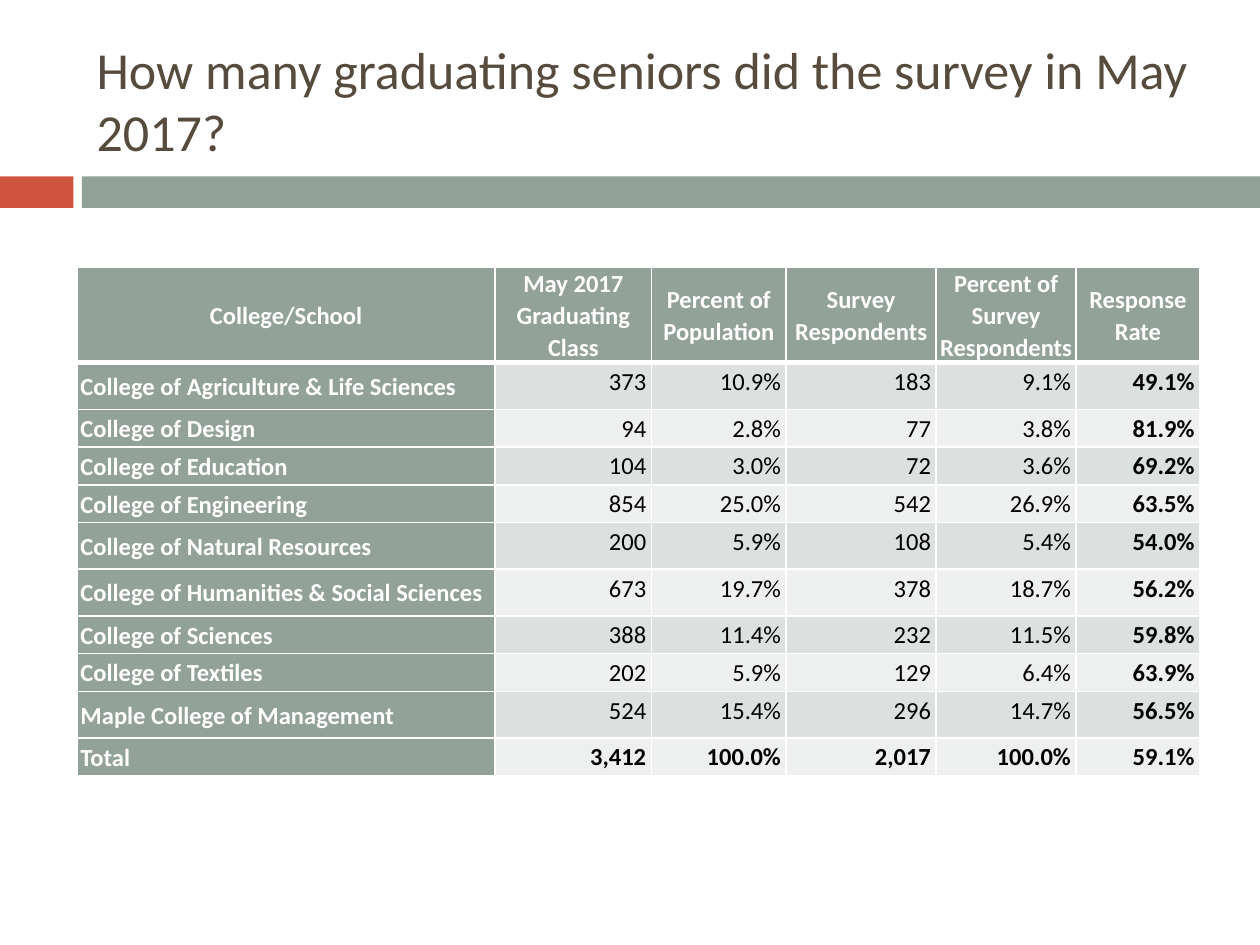
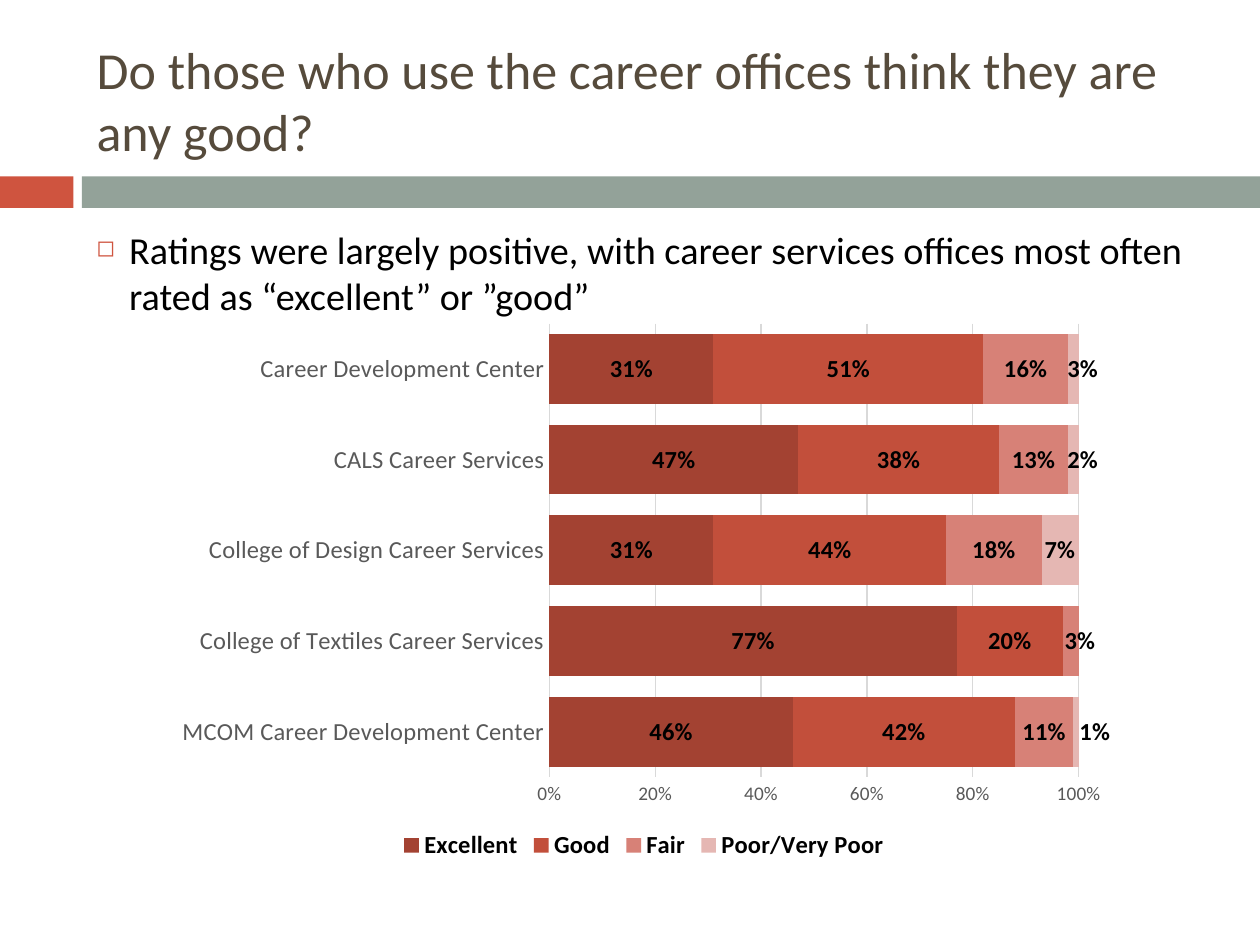
from copy import deepcopy
from dataclasses import dataclass

from lxml.etree import SubElement
from pptx import Presentation
from pptx.chart.data import CategoryChartData
from pptx.dml.color import RGBColor
from pptx.enum.chart import XL_CHART_TYPE, XL_LEGEND_POSITION, XL_TICK_MARK
from pptx.enum.shapes import MSO_SHAPE
from pptx.enum.text import MSO_ANCHOR, MSO_AUTO_SIZE, PP_ALIGN
from pptx.oxml.ns import qn
from pptx.util import Pt


@dataclass(frozen=True)
class Theme:
    """Colours, font and type sizes shared by the deck."""
    font: str = "Calibri"
    title: str = "564B3C"
    red: str = "CF543F"
    sage: str = "93A299"
    white: str = "FFFFFF"
    black: str = "000000"
    stripes: tuple = ("DCE0DE", "EEF0EF")
    axis_text: str = "595959"
    grid: str = "D9D9D9"
    ratings: tuple = ("A34232", "C24F3B", "D78177", "E5B7B3")
    title_size: float = 29.7
    body_size: float = 21.8
    label_size: float = 14
    tick_size: float = 11
    chart_size: float = 10


THEME = Theme()

COLUMN_WIDTHS = (239, 89.3, 77, 85.7, 80, 70.6)
TALL_ROW, SHORT_ROW = 26.6, 21.6
TALL_ROWS = (0, 1, 5, 6, 9)
RESPONSES = (
    ("College/School", "May 2017 Graduating Class", "Percent of Population",
     "Survey Respondents", "Percent of Survey Respondents", "Response Rate"),
    ("College of Agriculture & Life Sciences", "373", "10.9%", "183", "9.1%", "49.1%"),
    ("College of Design", "94", "2.8%", "77", "3.8%", "81.9%"),
    ("College of Education", "104", "3.0%", "72", "3.6%", "69.2%"),
    ("College of Engineering", "854", "25.0%", "542", "26.9%", "63.5%"),
    ("College of Natural Resources", "200", "5.9%", "108", "5.4%", "54.0%"),
    ("College of Humanities & Social Sciences", "673", "19.7%", "378", "18.7%", "56.2%"),
    ("College of Sciences", "388", "11.4%", "232", "11.5%", "59.8%"),
    ("College of Textiles", "202", "5.9%", "129", "6.4%", "63.9%"),
    ("Maple College of Management", "524", "15.4%", "296", "14.7%", "56.5%"),
    ("Total", "3,412", "100.0%", "2,017", "100.0%", "59.1%"),
)

OFFICES = ("MCOM Career Development Center", "College of Textiles Career Services",
           "College of Design Career Services", "CALS Career Services",
           "Career Development Center")
RATINGS = {
    "Excellent": (0.46, 0.77, 0.31, 0.47, 0.31),
    "Good": (0.42, 0.2, 0.44, 0.38, 0.51),
    "Fair": (0.11, 0.03, 0.18, 0.13, 0.16),
    "Poor/Very Poor": (0.01, 0, 0.07, 0.02, 0.03),
}
LABEL_SHIFTS = {"Fair": {1: 0.01}, "Poor/Very Poor": {0: 0.02, 1: None, 3: 0.01, 4: 0.01}}
PLOT_AREA = {"x": 0.4, "y": 0.02, "w": 0.56, "h": 0.82}


def place(left, top, width, height):
    """Convert a rectangle in points to lengths."""
    return Pt(left), Pt(top), Pt(width), Pt(height)


def paint(fill, color):
    """Give a fill one solid colour."""
    fill.solid()
    fill.fore_color.rgb = RGBColor.from_string(color)


def style_font(font, size, color, bold=False):
    """Apply the deck font with a size, colour and weight."""
    font.name, font.size, font.bold = THEME.font, Pt(size), bold
    font.color.rgb = RGBColor.from_string(color)


def style_line(line, color):
    """Draw a thin line in one colour."""
    line.width = Pt(0.75)
    line.color.rgb = RGBColor.from_string(color)


def add_band(page, left, width, color):
    """Add one piece of the band below the title."""
    band = page.shapes.add_shape(MSO_SHAPE.RECTANGLE, *place(left, 100.8, width, 18))
    band.shadow.inherit = False
    paint(band.fill, color)
    band.line.fill.background()


def add_page(deck, title):
    """Add a page with its bands and title."""
    page = deck.slides.add_slide(deck.slide_layouts[5])
    add_band(page, 0, 42, THEME.red)
    add_band(page, 46.8, 673.2, THEME.sage)
    box = page.shapes.title
    box.left, box.top, box.width, box.height = place(48, 18, 642, 78)
    frame = box.text_frame
    frame.text = title
    frame.word_wrap, frame.auto_size = True, MSO_AUTO_SIZE.NONE
    frame.vertical_anchor = MSO_ANCHOR.MIDDLE
    para = frame.paragraphs[0]
    para.alignment = PP_ALIGN.LEFT
    style_font(para.runs[0].font, THEME.title_size, THEME.title)
    return page


def add_bullet(page, text):
    """Add the body statement with a hollow square bullet."""
    box = page.shapes.add_textbox(*place(48, 126, 642, 354))
    frame = box.text_frame
    frame.word_wrap = True
    frame.text = text
    para = frame.paragraphs[0]
    para.space_before = Pt(5.2)
    style_font(para.runs[0].font, THEME.body_size, THEME.black)
    properties = para._p.get_or_add_pPr()
    properties.set("marL", str(Pt(18.7)))
    properties.set("indent", str(-Pt(18.7)))
    color = SubElement(properties, qn("a:buClr"))
    SubElement(color, qn("a:srgbClr"), val=THEME.red)
    SubElement(properties, qn("a:buSzPct"), val="60000")
    SubElement(properties, qn("a:buChar"), char="◻")


def add_borders(cell, row):
    """Draw white cell borders, thicker below the header row."""
    widths = {"L": 1, "R": 1, "T": 3 if row == 1 else 1, "B": 3 if row == 0 else 1}
    properties = cell._tc.get_or_add_tcPr()
    for side, width in widths.items():
        line = SubElement(properties, qn(f"a:ln{side}"), w=str(Pt(width)))
        fill = SubElement(line, qn("a:solidFill"))
        SubElement(fill, qn("a:srgbClr"), val=THEME.white)


def fill_cell(cell, text, row, column):
    """Write and format a cell by its place in the table."""
    heading = row == 0 or column == 0
    bold = heading or column == len(COLUMN_WIDTHS) - 1 or row == len(RESPONSES) - 1
    add_borders(cell, row)
    paint(cell.fill, THEME.sage if heading else THEME.stripes[(row - 1) % 2])
    cell.margin_left = cell.margin_right = Pt(2 if heading else 3)
    cell.margin_top = cell.margin_bottom = Pt(0)
    cell.vertical_anchor = MSO_ANCHOR.MIDDLE if heading else MSO_ANCHOR.TOP
    cell.text_frame.text = text
    para = cell.text_frame.paragraphs[0]
    para.line_spacing = 1.07 if heading else 1.15
    para.space_before = para.space_after = Pt(2.9)
    if row == 0:
        para.alignment = PP_ALIGN.CENTER
    else:
        para.alignment = PP_ALIGN.LEFT if heading else PP_ALIGN.RIGHT
    style_font(para.runs[0].font, THEME.label_size,
               THEME.white if heading else THEME.black, bold)


def add_response_table(page):
    """Add the table of survey responses by college."""
    heights = [TALL_ROW if row in TALL_ROWS else SHORT_ROW for row in range(len(RESPONSES))]
    table = page.shapes.add_table(
        len(RESPONSES), len(COLUMN_WIDTHS),
        *place(44, 152.6, sum(COLUMN_WIDTHS), sum(heights))).table
    for column, width in zip(table.columns, COLUMN_WIDTHS):
        column.width = Pt(width)
    for row, (height, texts) in enumerate(zip(heights, RESPONSES)):
        table.rows[row].height = Pt(height)
        for column, text in enumerate(texts):
            fill_cell(table.cell(row, column), text, row, column)


def adjust_label(labels, position, point, shift):
    """Move one point label sideways, or delete it when there is no shift."""
    group = labels._element
    label = group.makeelement(qn("c:dLbl"))
    SubElement(label, qn("c:idx"), val=str(point))
    if shift is None:
        SubElement(label, qn("c:delete"), val="1")
    else:
        manual = SubElement(SubElement(label, qn("c:layout")), qn("c:manualLayout"))
        SubElement(manual, qn("c:x"), val=str(shift))
        SubElement(manual, qn("c:y"), val="0")
        skipped = (qn("c:dLbl"), qn("c:showLeaderLines"))
        label.extend([deepcopy(part) for part in group if part.tag not in skipped])
    group.insert(position, label)


def style_series(series, color):
    """Colour a series and format its value labels."""
    paint(series.format.fill, color)
    labels = series.data_labels
    labels.show_value = True
    labels.number_format, labels.number_format_is_linked = "0%", False
    style_font(labels.font, THEME.label_size, THEME.black, True)
    shifts = LABEL_SHIFTS.get(series.name, {})
    for position, (point, shift) in enumerate(shifts.items()):
        adjust_label(labels, position, point, shift)


def style_axes(chart):
    """Format the office axis and the percentage axis."""
    offices, shares = chart.category_axis, chart.value_axis
    for axis, size in ((offices, THEME.label_size), (shares, THEME.tick_size)):
        axis.major_tick_mark = axis.minor_tick_mark = XL_TICK_MARK.NONE
        style_font(axis.tick_labels.font, size, THEME.axis_text)
    style_line(offices.format.line, THEME.grid)
    shares.format.line.fill.background()
    shares.minimum_scale, shares.maximum_scale, shares.major_unit = 0, 1, 0.2
    shares.tick_labels.number_format = "0%"
    shares.tick_labels.number_format_is_linked = False
    style_line(shares.major_gridlines.format.line, THEME.grid)


def fix_plot_area(chart):
    """Set the inner plot area as shares of the chart frame."""
    area = chart._chartSpace.chart.plotArea
    for layout in area.findall(qn("c:layout")):
        area.remove(layout)
    layout = area.makeelement(qn("c:layout"))
    area.insert(0, layout)
    manual = SubElement(layout, qn("c:manualLayout"))
    SubElement(manual, qn("c:layoutTarget"), val="inner")
    for side in "xy":
        SubElement(manual, qn(f"c:{side}Mode"), val="edge")
    for side, share in PLOT_AREA.items():
        SubElement(manual, qn(f"c:{side}"), val=str(share))


def add_rating_chart(page):
    """Add the stacked bars of career office ratings."""
    data = CategoryChartData(number_format="0%")
    data.categories = OFFICES
    for name, values in RATINGS.items():
        data.add_series(name, values)
    chart = page.shapes.add_chart(
        XL_CHART_TYPE.BAR_STACKED, *place(98, 178.6, 540, 316), data).chart
    chart.has_title = False
    style_font(chart.font, THEME.chart_size, THEME.black)
    chart.has_legend = True
    chart.legend.position = XL_LEGEND_POSITION.BOTTOM
    chart.legend.include_in_layout = False
    style_font(chart.legend.font, THEME.label_size, THEME.black, True)
    plot = chart.plots[0]
    plot.gap_width, plot.overlap, plot.vary_by_categories = 30, 100, False
    for series, color in zip(plot.series, THEME.ratings):
        style_series(series, color)
    style_axes(chart)
    fix_plot_area(chart)


def main():
    """Build and save the deck."""
    deck = Presentation()
    deck.slide_width, deck.slide_height = Pt(720), Pt(540)
    page = add_page(deck, "How many graduating seniors did the survey in May 2017?")
    add_response_table(page)
    page = add_page(deck, "Do those who use the career offices think they are any good?")
    add_bullet(page, "Ratings were largely positive, with career services offices "
                     "most often rated as “excellent” or ”good”")
    add_rating_chart(page)
    deck.save("out.pptx")


if __name__ == "__main__":
    main()
